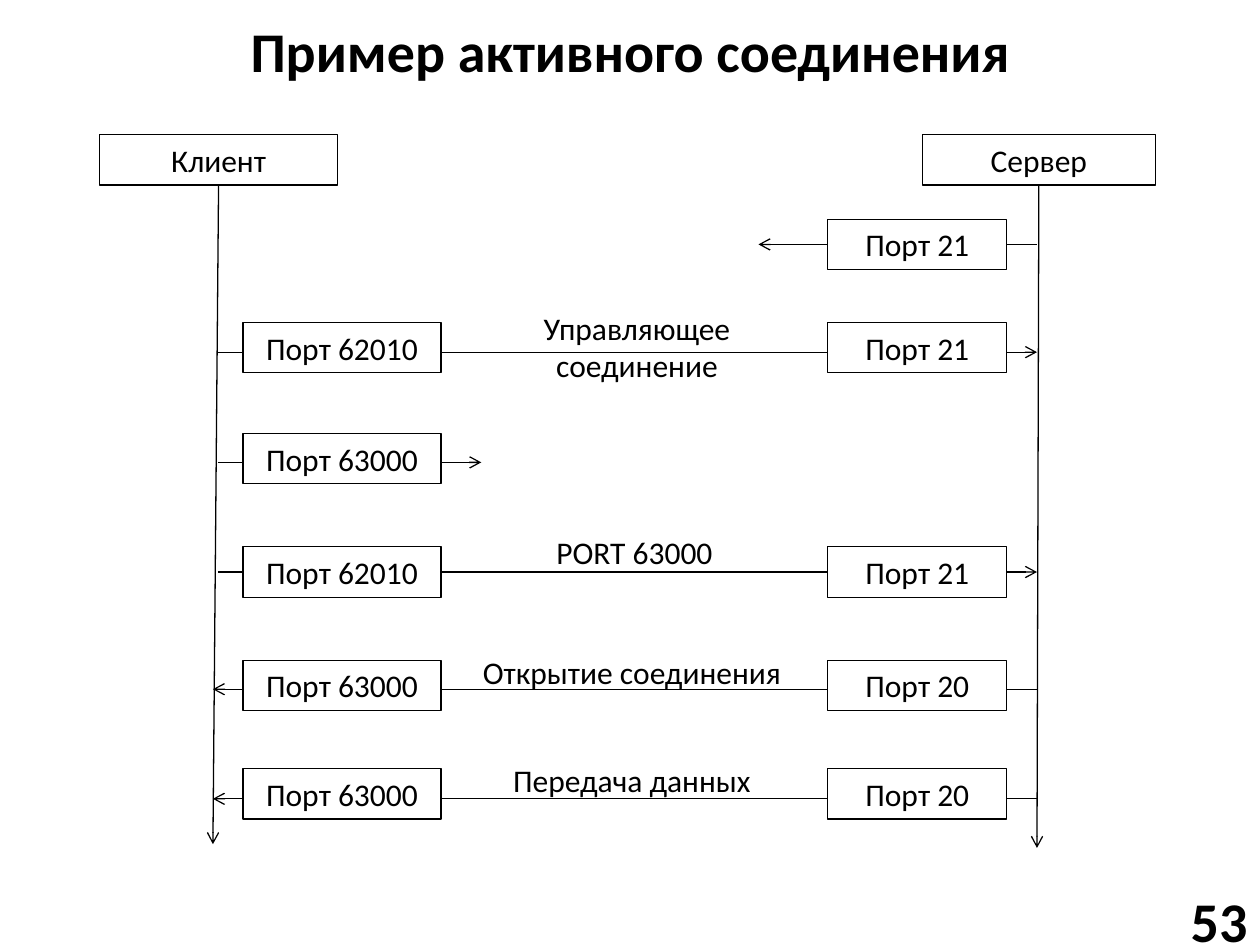
from dataclasses import dataclass
from typing import Optional

from lxml.etree import SubElement
from pptx import Presentation
from pptx.dml.color import RGBColor
from pptx.enum.shapes import MSO_CONNECTOR, MSO_SHAPE
from pptx.enum.text import MSO_ANCHOR, MSO_AUTO_SIZE, PP_ALIGN
from pptx.oxml.ns import qn
from pptx.util import Emu, Inches, Pt


@dataclass(frozen=True)
class Theme:
    ink: RGBColor = RGBColor(0, 0, 0)
    paper: RGBColor = RGBColor(255, 255, 255)
    font: str = "Calibri"
    head: int = 32
    body: int = 18
    line: float = 0.75


@dataclass(frozen=True)
class Area:
    """Place on a grid of 100 columns by 75 rows."""
    col: float
    row: float
    wide: float
    high: float = 4


@dataclass(frozen=True)
class Step:
    """One exchange: line row, box row, ends, ports and label."""
    line: float
    box: float
    start: float
    end: float
    left: str = ""
    right: str = ""
    note: str = ""
    place: Optional[Area] = None


THEME = Theme()
COLS, ROWS = 100, 75
CLIENT, FOOT, SERVER = 17.3, 16.9, 82.3   # line ends on the two sides
LEFT, LEFT_W = 19.3, 15.7                 # client port boxes
RIGHT, RIGHT_W = 65.7, 14.2               # server port boxes

STEPS = [
    Step(19.4, 17.4, SERVER, 60.2, right="Порт 21"),
    Step(27.95, 25.6, CLIENT, SERVER, "Порт 62010", "Порт 21",
         "Управляющее соединение", Area(35.8, 24, 29.5, 7.1)),
    Step(36.7, 34.4, CLIENT, 38.2, "Порт 63000"),
    Step(45.4, 43.4, CLIENT, SERVER, "Порт 62010", "Порт 21",
         "PORT 63000", Area(35.4, 41.8, 29.9)),
    Step(54.7, 52.4, SERVER, FOOT, "Порт 63000", "Порт 20",
         "Открытие соединения", Area(35.4, 51.3, 29.5)),
    Step(63.4, 61, SERVER, FOOT, "Порт 63000", "Порт 20",
         "Передача данных", Area(35.4, 59.9, 29.5)),
]

deck = Presentation()
deck.slide_width, deck.slide_height = Inches(10), Inches(7.5)
slide = deck.slides.add_slide(deck.slide_layouts[5])
shapes = slide.shapes


def across(col: float) -> Emu:
    return Emu(round(deck.slide_width * col / COLS))


def down(row: float) -> Emu:
    return Emu(round(deck.slide_height * row / ROWS))


def spots(area: Area) -> tuple:
    return (across(area.col), down(area.row),
            across(area.wide), down(area.high))


def write(shape, text: str, size: int, bold: bool = False,
          align=PP_ALIGN.CENTER, anchor=MSO_ANCHOR.TOP) -> None:
    frame = shape.text_frame
    frame.text = text
    form = {"word_wrap": True, "auto_size": MSO_AUTO_SIZE.NONE,
            "vertical_anchor": anchor}
    for name, value in form.items():
        setattr(frame, name, value)
    para = frame.paragraphs[0]
    para.alignment = align
    font = para.runs[0].font
    form = {"name": THEME.font, "size": Pt(size), "bold": bold}
    for name, value in form.items():
        setattr(font, name, value)
    font.color.rgb = THEME.ink


def box(area: Area, text: str, solid: bool = True):
    shape = shapes.add_shape(MSO_SHAPE.RECTANGLE, *spots(area))
    shape.shadow.inherit = False
    if solid:
        shape.fill.solid()
        shape.fill.fore_color.rgb = THEME.paper
    else:
        shape.fill.background()
    shape.line.color.rgb = THEME.ink
    shape.line.width = Pt(THEME.line)
    write(shape, text, THEME.body)
    return shape


def label(area: Area, text: str, size: int = THEME.body, **form) -> None:
    write(shapes.add_textbox(*spots(area)), text, size, **form)


def arrow(x1: float, y1: float, x2: float, y2: float):
    link = shapes.add_connector(MSO_CONNECTOR.STRAIGHT, across(x1), down(y1),
                                across(x2), down(y2))
    link.line.color.rgb = THEME.ink
    link.line.width = Pt(THEME.line)
    SubElement(link.line._get_or_add_ln(), qn("a:tailEnd"), type="arrow")
    SubElement(link._element.spPr, qn("a:effectLst"))
    return link


# Title and page number
title = shapes.title
title.left, title.top, title.width, title.height = spots(
    Area(2.8, 0.5, 94.5, 6.9))
write(title, "Пример активного соединения", THEME.head, bold=True,
      anchor=MSO_ANCHOR.MIDDLE)
label(Area(88.6, 71, 11.4), "53", THEME.head, bold=True,
      align=PP_ALIGN.RIGHT, anchor=MSO_ANCHOR.MIDDLE)

# The two sides with their time lines
for name, area, foot, end in [
    ("Клиент", Area(7.9, 10.7, 18.9), FOOT, 67),
    ("Сервер", Area(73.2, 10.7, 18.5), SERVER, 67.3),
]:
    side = box(area, name, solid=False)
    axis = arrow(area.col + area.wide / 2, area.row + area.high, foot, end)
    axis.begin_connect(side, 2)

# Exchanges: the port boxes cover their arrow
for step in STEPS:
    arrow(step.start, step.line, step.end, step.line)
    if step.left:
        box(Area(LEFT, step.box, LEFT_W), step.left)
    if step.right:
        box(Area(RIGHT, step.box, RIGHT_W), step.right)
    if step.place:
        label(step.place, step.note)

deck.save("out.pptx")
